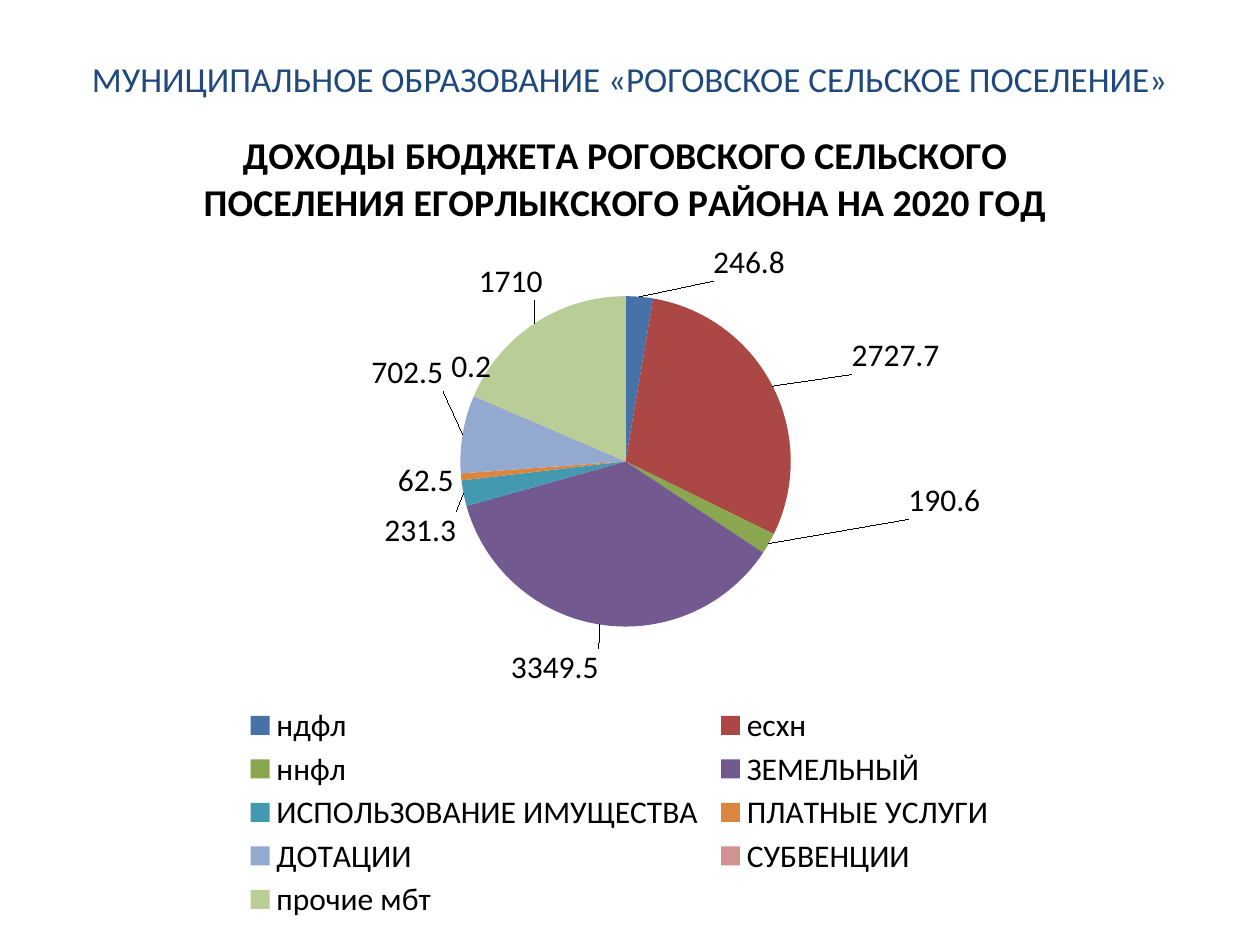
import pptx
import pptx.chart.data
import pptx.dml.color
import pptx.enum.chart
import pptx.enum.text
import pptx.oxml
import pptx.oxml.ns
import pptx.util

Pt = pptx.util.Pt
FONT = "Calibri"
COLORS = {"head": "1F497D", "text": "000000"}

# name, value, fill, label shift as a share of the chart
INCOME = [
    ("ндфл", 246.8, "4672A8", (0.09, -0.01)),
    ("есхн", 2727.7, "AB4744", (0.06, -0.01)),
    ("ннфл", 190.6, "8AA64F", (0.11, -0.08)),
    ("ЗЕМЕЛЬНЫЙ", 3349.5, "725990", (0, 0.02)),
    ("ИСПОЛЬЗОВАНИЕ ИМУЩЕСТВА", 231.3, "4299B0", (0, 0.02)),
    ("ПЛАТНЫЕ УСЛУГИ", 62.5, "DC853E", (0, -0.02)),
    ("ДОТАЦИИ", 702.5, "93A9CF", (-0.01, -0.05)),
    ("СУБВЕНЦИИ", 0.2, "D19392", (0.02, -0.01)),
    ("прочие мбт", 1710, "B9CD96", (0.01, -0.02)),
]


def rgb(code):
    return pptx.dml.color.RGBColor.from_string(code)


def style(font, size, color, bold=False):
    font.name, font.size, font.bold = FONT, Pt(size), bold
    font.color.rgb = rgb(color)


def layout(**parts):
    """Return a manual c:layout element with the given settings."""
    body = "".join(f'<c:{key} val="{val}"/>' for key, val in parts.items())
    return pptx.oxml.parse_xml(
        f'<c:layout {pptx.oxml.ns.nsdecls("c")}>'
        f"<c:manualLayout>{body}</c:manualLayout></c:layout>")


def place(node, **parts):
    """Swap the layout of a plot area or legend for a manual one."""
    old = node.find(pptx.oxml.ns.qn("c:layout"))
    if old is not None:
        node.remove(old)
    new = layout(**parts)
    pos = node.find(pptx.oxml.ns.qn("c:legendPos"))
    if pos is None:
        node.insert(0, new)
    else:
        pos.addnext(new)


def add_head(slide, left, top, width, height):
    head = slide.shapes.title
    head.left, head.top, head.width, head.height = map(
        Pt, (left, top, width, height))
    frame = head.text_frame
    frame.text = "МУНИЦИПАЛЬНОЕ ОБРАЗОВАНИЕ «РОГОВСКОЕ СЕЛЬСКОЕ ПОСЕЛЕНИЕ»"
    frame.vertical_anchor = pptx.enum.text.MSO_ANCHOR.MIDDLE
    para = frame.paragraphs[0]
    para.alignment = pptx.enum.text.PP_ALIGN.CENTER
    style(para.font, 20, COLORS["head"])


def add_labels(series):
    """Colour each slice and set its value label clear of the others."""
    outside = pptx.enum.chart.XL_LABEL_POSITION.OUTSIDE_END
    labels = series.data_labels
    labels.show_value = True
    labels.position = outside
    style(labels.font, 18, COLORS["text"])
    for index, (_, _, fill, (x, y)) in enumerate(INCOME):
        point = series.points[index]
        point.format.fill.solid()
        point.format.fill.fore_color.rgb = rgb(fill)
        label = point.data_label
        label.position = outside
        style(label.font, 18, COLORS["text"])
        mark = series._element.xpath(
            f'c:dLbls/c:dLbl/c:idx[@val="{index}"]')[0]
        mark.addnext(layout(x=x, y=y))


def add_pie(slide, left, top, width, height):
    data = pptx.chart.data.CategoryChartData()
    data.categories = [row[0] for row in INCOME]
    data.add_series("Series 1", [row[1] for row in INCOME])
    chart = slide.shapes.add_chart(
        pptx.enum.chart.XL_CHART_TYPE.PIE,
        *map(Pt, (left, top, width, height)), data).chart
    style(chart.font, 18, COLORS["text"])

    frame = chart.chart_title.text_frame
    frame.text = ("ДОХОДЫ БЮДЖЕТА РОГОВСКОГО СЕЛЬСКОГО ПОСЕЛЕНИЯ "
                  "ЕГОРЛЫКСКОГО РАЙОНА НА 2020 ГОД")
    style(frame.paragraphs[0].font, 21.6, COLORS["text"], True)
    chart.chart_title.include_in_layout = False

    chart.has_legend = True
    legend = chart.legend
    legend.position = pptx.enum.chart.XL_LEGEND_POSITION.BOTTOM
    legend.include_in_layout = False
    style(legend.font, 18, COLORS["text"])
    place(legend._element, xMode="edge", yMode="edge",
          x=0.18, y=0.73, w=0.63, h=0.27)

    plot = chart.plots[0]
    plot.vary_by_categories = True
    add_labels(plot.series[0])
    place(plot._element.getparent(), layoutTarget="inner",
          xMode="edge", yMode="edge", x=0.36, y=0.24, w=0.28, h=0.4)


def main():
    deck = pptx.Presentation()
    deck.slide_width, deck.slide_height = Pt(720), Pt(540)
    slide = deck.slides.add_slide(deck.slide_layouts.get_by_name("Title Only"))
    add_head(slide, 36, 21.6, 648, 46)
    add_pie(slide, 11.5, 56, 692, 472)
    deck.save("out.pptx")


if __name__ == "__main__":
    main()
